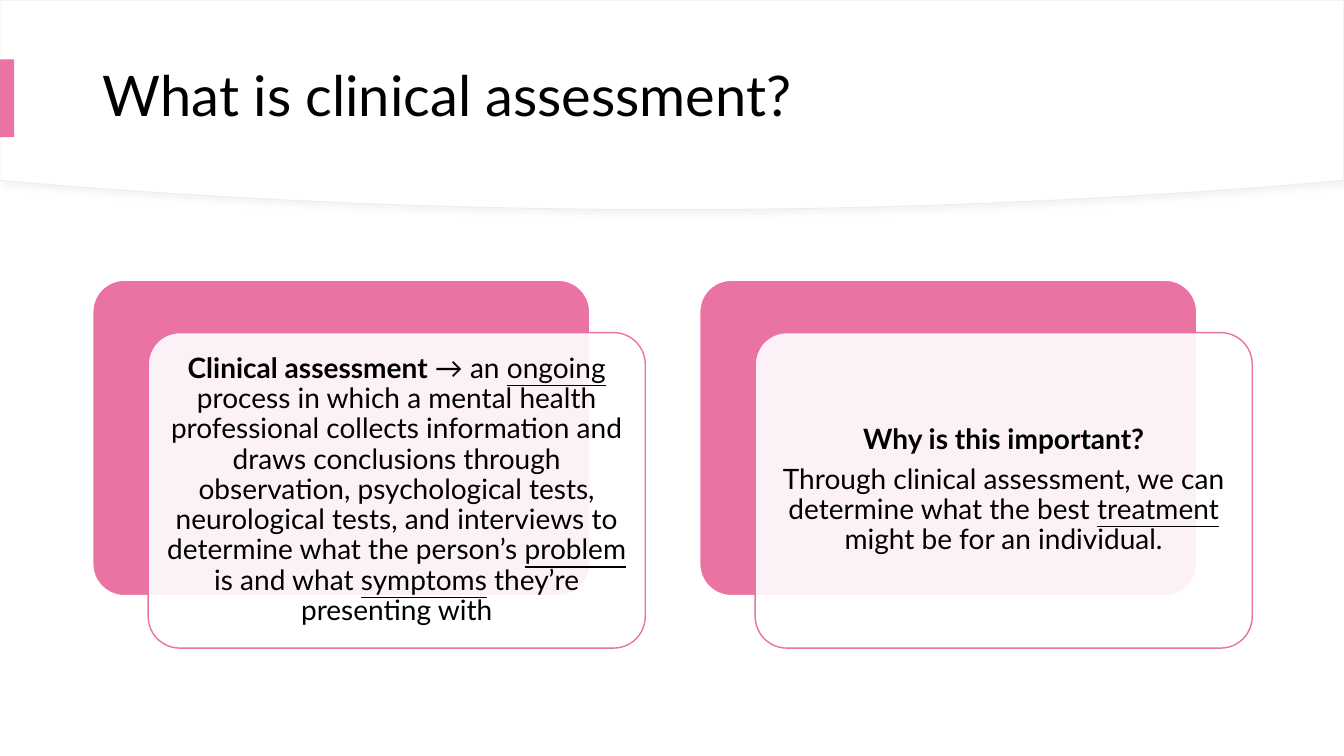
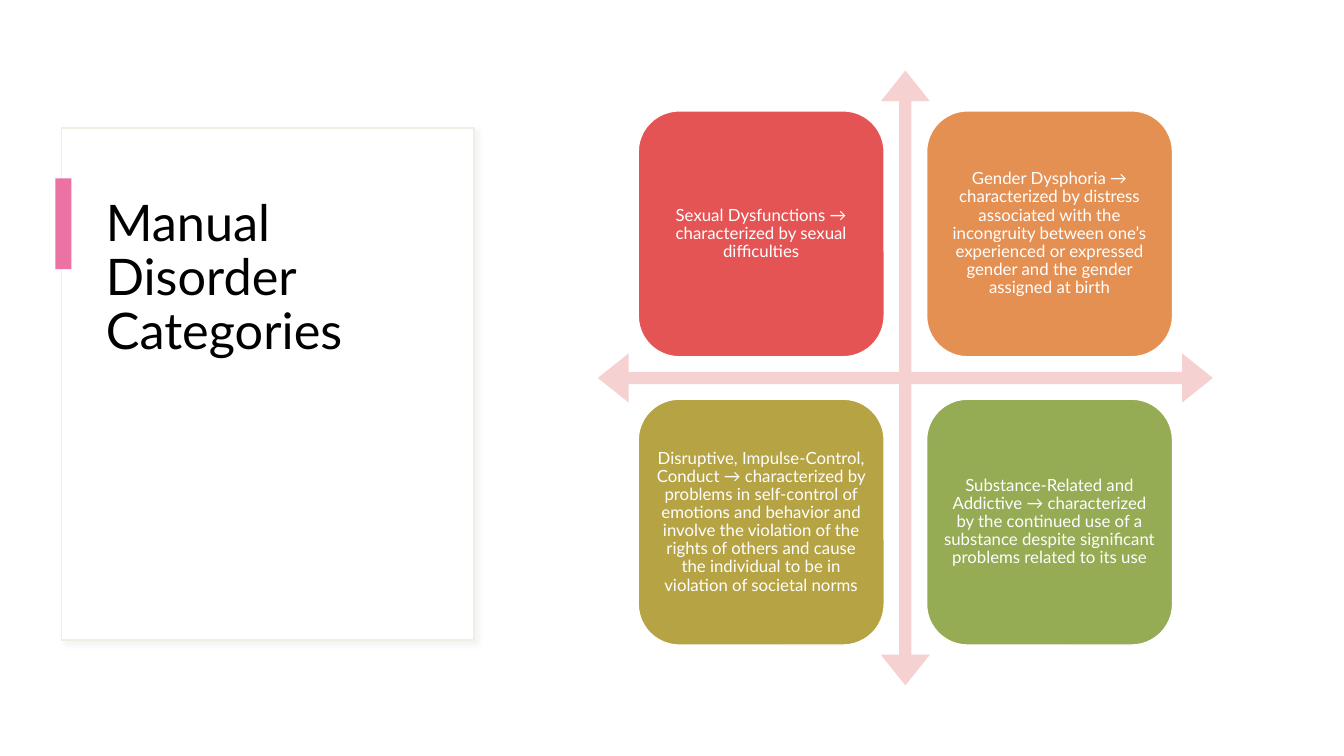
from lxml import etree
from pptx import Presentation
from pptx.dml.color import RGBColor
from pptx.enum.shapes import MSO_SHAPE
from pptx.enum.text import MSO_ANCHOR, MSO_AUTO_SIZE, PP_ALIGN
from pptx.oxml.ns import qn
from pptx.util import Inches, Pt

RECT, ROUNDED = MSO_SHAPE.RECTANGLE, MSO_SHAPE.ROUNDED_RECTANGLE
QUAD_ARROW = MSO_SHAPE.QUAD_ARROW
TOP, MIDDLE = MSO_ANCHOR.TOP, MSO_ANCHOR.MIDDLE
LEFT, CENTER = PP_ALIGN.LEFT, PP_ALIGN.CENTER

BLACK = RGBColor(0x00, 0x00, 0x00)
WHITE = RGBColor(0xFF, 0xFF, 0xFF)
PINK = RGBColor(0xEA, 0x73, 0xA4)
PALE_PINK = RGBColor(0xF5, 0xD1, 0xD1)
RED = RGBColor(0xE5, 0x54, 0x54)
ORANGE = RGBColor(0xE5, 0x90, 0x53)
OLIVE = RGBColor(0xB6, 0xA3, 0x43)
GREEN = RGBColor(0x95, 0xAB, 0x54)
PANEL_LINE = RGBColor(0xF0, 0xEE, 0xE4)
SHADOW = RGBColor(0xD9, 0xD9, 0xD9)

FONT = "Lato"
SLIDE_W, SLIDE_H = 13.33, 7.5
TITLE_ONLY = 5
LINE_SPACING = 0.9
SPACE_AFTER = 0.35  # share of the text size

CARDS = [
    [[("Clinical assessment ", "b"), ("→ an ", ""), ("ongoing", "u"),
      (" process in which a mental health professional collects information "
       "and draws conclusions through observation, psychological tests, "
       "neurological tests, and interviews to determine what the person’s ", ""),
      ("problem", "u"), (" is and what ", ""), ("symptoms", "u"),
      (" they’re presenting with", "")]],
    [[("Why is this important?", "b")],
     [("Through clinical assessment, we can determine what the best ", ""),
      ("treatment", "u"), (" might be for an individual.", "")]],
]

CATEGORIES = [
    (RED, "Sexual Dysfunctions → characterized by sexual difficulties"),
    (ORANGE, "Gender Dysphoria → characterized by distress associated with the "
             "incongruity between one’s experienced or expressed gender and the "
             "gender assigned at birth"),
    (OLIVE, "Disruptive, Impulse-Control, Conduct → characterized by problems in "
            "self-control of emotions and behavior and involve the violation of "
            "the rights of others and cause the individual to be in violation of "
            "societal norms"),
    (GREEN, "Substance-Related and Addictive → characterized by the continued use "
            "of a substance despite significant problems related to its use"),
]


def paint(shape, fill, line=None, width=1):
    shape.shadow.inherit = False
    shape.fill.solid()
    shape.fill.fore_color.rgb = fill
    if line is None:
        shape.line.fill.background()
    else:
        shape.line.color.rgb = line
        shape.line.width = Pt(width)


def add_block(s, kind, box, fill, line=None, adjust=()):
    shape = s.shapes.add_shape(kind, *map(Inches, box))
    for i, value in enumerate(adjust):
        shape.adjustments[i] = value
    paint(shape, fill, line)
    return shape


def set_opacity(shape, percent):
    color = shape.element.spPr.find(qn("a:solidFill"))[0]
    etree.SubElement(color, qn("a:alpha"), val=str(percent * 1000))


def add_soft_shadow(shape):
    effects = shape.element.spPr.find(qn("a:effectLst"))
    outer = etree.SubElement(effects, qn("a:outerShdw"), blurRad=str(Pt(4)),
                             dist=str(Pt(3)), dir=str(45 * 60000))
    color = etree.SubElement(outer, qn("a:srgbClr"), val=str(SHADOW))
    etree.SubElement(color, qn("a:alpha"), val="30000")


def write(shape, paragraphs, size, color, align, anchor, inset, after=0):
    """Fill a shape with paragraphs, each a list of (text, style) with style b, u or empty."""
    tf = shape.text_frame
    tf.word_wrap = True
    tf.auto_size = MSO_AUTO_SIZE.NONE
    tf.vertical_anchor = anchor
    tf.margin_left = tf.margin_right = Inches(inset)
    tf.margin_top = tf.margin_bottom = Inches(min(inset, 0.08))
    for i, runs in enumerate(paragraphs):
        p = tf.add_paragraph() if i else tf.paragraphs[0]
        p.alignment = align
        p.line_spacing = LINE_SPACING
        p.space_after = Pt(size * after)
        for text, style in runs:
            r = p.add_run()
            r.text = text
            r.font.name = FONT
            r.font.size = Pt(size)
            r.font.color.rgb = color
            r.font.bold = style == "b"
            r.font.underline = style == "u"


def add_titled_slide(prs, title, box, size, anchor, accent):
    s = prs.slides.add_slide(prs.slide_layouts[TITLE_ONLY])
    holder = s.shapes.title
    holder.left, holder.top, holder.width, holder.height = map(Inches, box)
    write(holder, [[(title, "")]], size, BLACK, LEFT, anchor, 0.1)
    add_block(s, RECT, accent, PINK)
    return s


def put_behind_title(s, panel):
    add_soft_shadow(panel)
    s.shapes.title.element.addprevious(panel.element)


def add_curved_header(s, edge=1.79, middle=2.08, steps=60):
    """Draw the header panel, whose lower edge is a shallow parabola."""
    points = [(SLIDE_W, 0)]
    for i in range(steps, -1, -1):
        offset = 2 * i / steps - 1
        points.append((SLIDE_W * i / steps, middle - (middle - edge) * offset ** 2))
    builder = s.shapes.build_freeform(0, 0)
    builder.add_line_segments([(Inches(x), Inches(y)) for x, y in points], close=True)
    panel = builder.convert_to_shape()
    paint(panel, WHITE, PANEL_LINE, 0.75)
    put_behind_title(s, panel)


def add_card(s, left, top, paragraphs):
    w, h = 4.93, 3.13
    add_block(s, ROUNDED, (left, top, w, h), PINK, WHITE, (0.1,))
    front = add_block(s, ROUNDED, (left + 0.55, top + 0.52, w, h), WHITE, PINK, (0.1,))
    set_opacity(front, 90)
    write(front, paragraphs, 20, BLACK, CENTER, MIDDLE, 0.08, SPACE_AFTER)


def add_matrix(s, left, top, size):
    """Draw the four-way arrow with one category tile in each quarter."""
    add_block(s, QUAD_ARROW, (left, top, size, size), PALE_PINK, adjust=(0.02, 0.04, 0.05))
    tile, margin = 0.4 * size, 0.4
    pitch = size - 2 * margin - tile
    for i, (color, text) in enumerate(CATEGORIES):
        row, col = divmod(i, 2)
        box = (left + margin + col * pitch, top + margin + row * pitch, tile, tile)
        shape = add_block(s, ROUNDED, box, color, WHITE)
        write(shape, [[(text, "")]], 12, WHITE, CENTER, MIDDLE, 0.05, SPACE_AFTER)


def build_assessment(prs):
    s = add_titled_slide(prs, "What is clinical assessment?", (0.92, 0.28, 11.5, 1.39),
                         40, MIDDLE, (0, 0.59, 0.14, 0.77))
    add_curved_header(s)
    for i, paragraphs in enumerate(CARDS):
        add_card(s, 0.92 + i * 6.02, 2.78, paragraphs)


def build_categories(prs):
    s = add_titled_slide(prs, "Manual Disorder Categories", (0.95, 1.88, 3.39, 3.85),
                         36, TOP, (0.55, 1.77, 0.16, 0.9))
    put_behind_title(s, add_block(s, RECT, (0.61, 1.27, 4.09, 5.08), WHITE, PANEL_LINE))
    add_matrix(s, 5.93, 0.7, 6.1)


def main():
    prs = Presentation()
    prs.slide_width, prs.slide_height = Inches(SLIDE_W), Inches(SLIDE_H)
    build_assessment(prs)
    build_categories(prs)
    prs.save("out.pptx")


if __name__ == "__main__":
    main()
